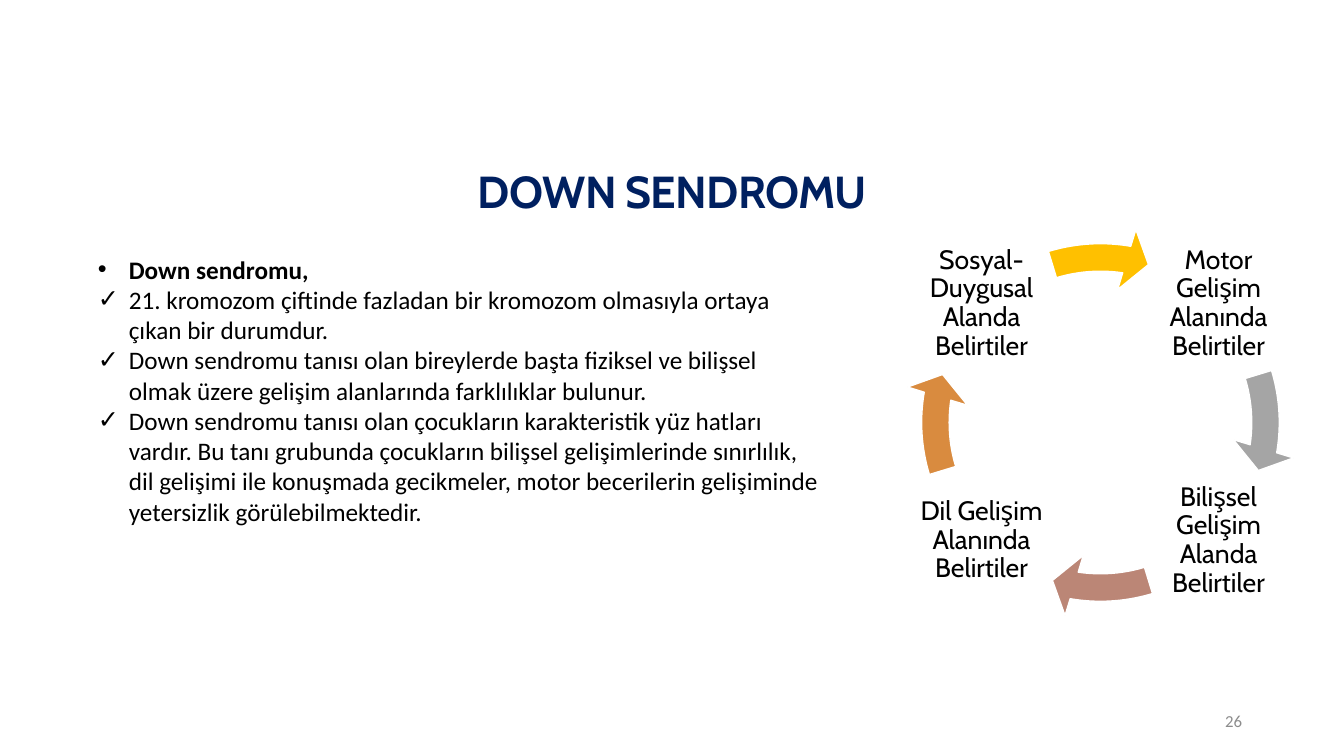
from lxml import etree
from pptx import Presentation
from pptx.dml.color import RGBColor
from pptx.enum.shapes import MSO_SHAPE as Preset
from pptx.enum.text import MSO_ANCHOR as Anchor, PP_ALIGN as Align
from pptx.oxml.ns import qn
from pptx.util import Pt

NAVY = RGBColor(0x00, 0x20, 0x60)
BLACK = RGBColor(0x00, 0x00, 0x00)
WHITE = RGBColor(0xFF, 0xFF, 0xFF)
PAGE_GRAY = RGBColor(0x8C, 0x8C, 0x8C)
GRAY = RGBColor(0xA5, 0xA5, 0xA5)
ROSE = RGBColor(0xBB, 0x86, 0x76)
ORANGE = RGBColor(0xD9, 0x8B, 0x3F)
GOLD = RGBColor(0xFF, 0xC0, 0x00)

TITLE = "DOWN SENDROMU"
PAGE_NUMBER = "26"
POINTS = [  # bullet, text, bold
    ("•", "Down sendromu,", True),
    ("✓", "21. kromozom çiftinde fazladan bir kromozom olmasıyla ortaya "
          "çıkan bir durumdur.", False),
    ("✓", "Down sendromu tanısı olan bireylerde başta fiziksel ve bilişsel "
          "olmak üzere gelişim alanlarında farklılıklar bulunur.", False),
    ("✓", "Down sendromu tanısı olan çocukların karakteristik yüz hatları "
          "vardır. Bu tanı grubunda çocukların bilişsel gelişimlerinde "
          "sınırlılık, dil gelişimi ile konuşmada gecikmeler, motor "
          "becerilerin gelişiminde yetersizlik görülebilmektedir.", False),
]
# Clockwise from top right: label, column, row, colour of the arrow leaving it
CYCLE = [
    ("Motor Gelişim Alanında Belirtiler", 1, 0, GRAY),
    ("Bilişsel Gelişim Alanda Belirtiler", 1, 1, ROSE),
    ("Dil Gelişim Alanında Belirtiler", 0, 1, ORANGE),
    ("Sosyal-Duygusal Alanda Belirtiler", 0, 0, GOLD),
]

PX = 914400 / 100.8
LABEL_LEFT, LABEL_TOP, LABEL_SIZE, LABEL_STEP = 912, 234, 139, 237
RING = (904, 226, 393, 393)
HEAD_ANGLE, TAIL_ANGLE = 9.16, 343.09
ANGLE_UNIT = 0.6  # one degree as an adjustment value
INDENT = 31


def px(length):
    return round(length * PX)


def add_frame(slide, box, anchor=Anchor.TOP, inset=None):
    frame = slide.shapes.add_textbox(*map(px, box)).text_frame
    frame.word_wrap = True
    frame.vertical_anchor = anchor
    if inset is not None:
        frame.margin_left = frame.margin_right = px(inset)
        frame.margin_top = frame.margin_bottom = px(inset)
    return frame


def write(paragraph, text, font, size, color, bold=False,
          align=Align.LEFT, line_spacing=None):
    paragraph.alignment = align
    paragraph.line_spacing = line_spacing
    run = paragraph.add_run()
    run.text = text
    run.font.name, run.font.size, run.font.bold = font, Pt(size), bold
    run.font.color.rgb = color
    return run


def add_bullet(paragraph, mark):
    properties = paragraph._p.get_or_add_pPr()
    properties.set("marL", str(px(INDENT)))
    properties.set("indent", str(-px(INDENT)))
    etree.SubElement(properties, qn("a:buFont")).set("typeface", "Arial")
    etree.SubElement(properties, qn("a:buChar")).set("char", mark)


def add_cycle_arrow(slide, quarter, color):
    arrow = slide.shapes.add_shape(Preset.CIRCULAR_ARROW, *map(px, RING))
    arrow.shadow.inherit = False
    arrow.fill.solid()
    arrow.fill.fore_color.rgb = color
    arrow.line.color.rgb = WHITE
    arrow.line.width = Pt(1)
    turn = 90 * quarter
    angles = (7.76, (HEAD_ANGLE + turn) % 360, (TAIL_ANGLE + turn) % 360)
    values = (0.07, *(angle * ANGLE_UNIT for angle in angles), 0.08)
    for index, value in enumerate(values):
        arrow.adjustments[index] = value


def main():
    deck = Presentation()
    deck.slide_width, deck.slide_height = px(1344), px(756)
    slide = deck.slides.add_slide(deck.slide_layouts[6])

    heading = add_frame(slide, (372, 119, 601, 149), Anchor.MIDDLE)
    title = write(heading.paragraphs[0], TITLE, "Cabin", 32, NAVY, True,
                  Align.CENTER, 0.9)
    title._r.get_or_add_rPr().set("spc", "-50")

    for quarter, (label, column, row, color) in enumerate(CYCLE):
        box = (LABEL_LEFT + column * LABEL_STEP, LABEL_TOP + row * LABEL_STEP,
               LABEL_SIZE, LABEL_SIZE)
        frame = add_frame(slide, box, Anchor.MIDDLE, inset=3)
        write(frame.paragraphs[0], label, "Cabin", 19, BLACK,
              align=Align.CENTER, line_spacing=0.9)
        add_cycle_arrow(slide, quarter, color)

    footer = add_frame(slide, (950, 701, 302, 40), Anchor.MIDDLE)
    write(footer.paragraphs[0], PAGE_NUMBER, "Calibri", 12, PAGE_GRAY,
          align=Align.RIGHT)

    body = add_frame(slide, (88, 249, 741, 315))
    for index, (mark, text, bold) in enumerate(POINTS):
        paragraph = body.add_paragraph() if index else body.paragraphs[0]
        add_bullet(paragraph, mark)
        write(paragraph, text, "Calibri", 18, BLACK, bold)

    deck.save("out.pptx")


if __name__ == "__main__":
    main()
